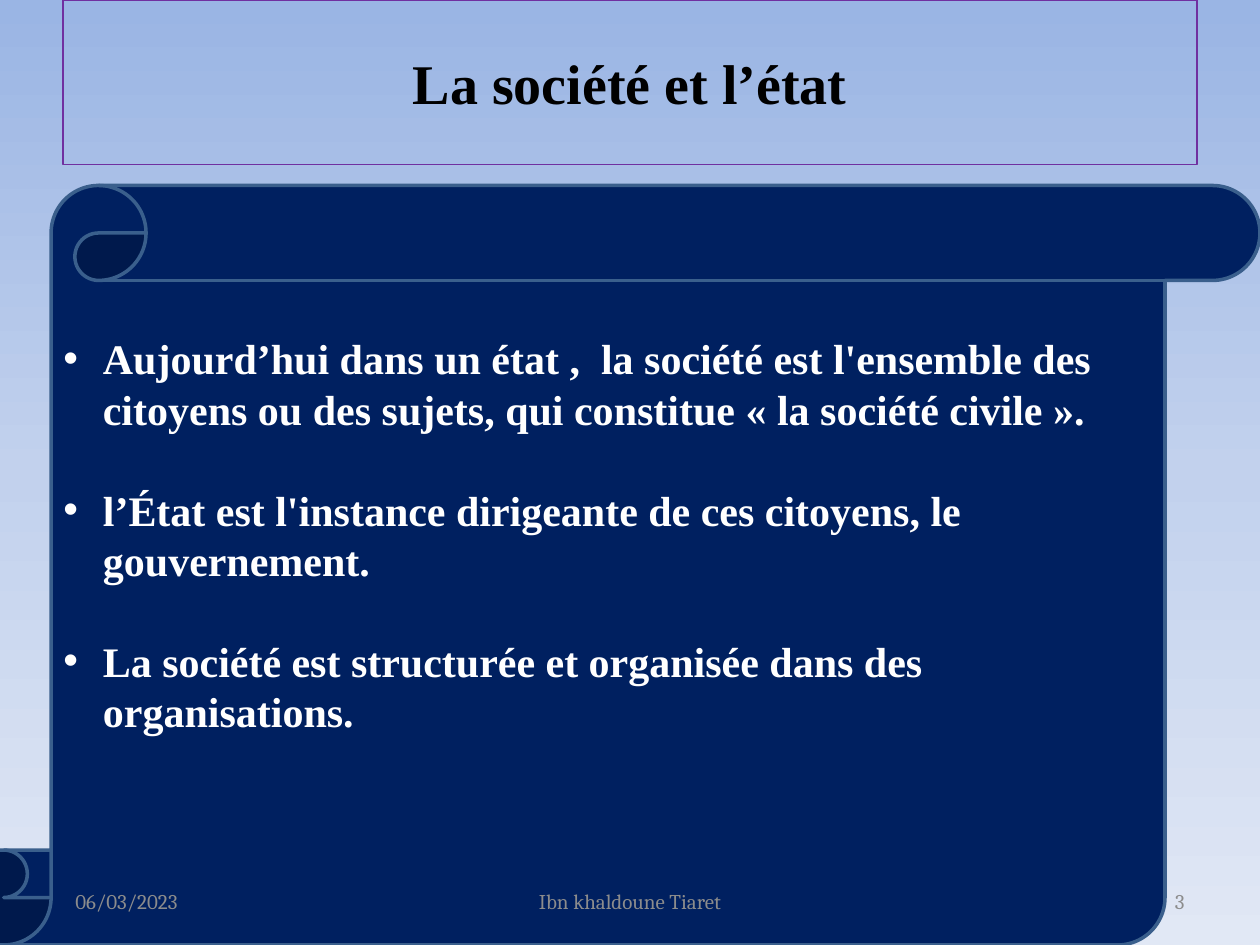
from copy import deepcopy

from pptx import Presentation
from pptx.dml.color import RGBColor
from pptx.enum.shapes import MSO_SHAPE as Shape
from pptx.enum.text import MSO_ANCHOR as Anchor, PP_ALIGN as Align
from pptx.oxml.ns import qn
from pptx.oxml.xmlchemy import OxmlElement
from pptx.util import Pt

NAVY = RGBColor(0x00, 0x20, 0x60)
STEEL = RGBColor(0x3A, 0x5F, 0x8C)
PURPLE = RGBColor(0x70, 0x30, 0xA0)
WHITE = RGBColor(0xFF, 0xFF, 0xFF)
BLACK = RGBColor(0x00, 0x00, 0x00)
GREY = RGBColor(0x8C, 0x8C, 0x8C)
SKY = [
    (0, RGBColor(0x9A, 0xB5, 0xE4)),
    (0.5, RGBColor(0xC2, 0xD1, 0xED)),
    (1, RGBColor(0xE1, 0xE8, 0xF5)),
]

TITLE_FONT = {"name": "Times New Roman", "size": Pt(32), "bold": True}
BODY_FONT = {"name": "Times New Roman", "size": Pt(24), "bold": True}
FOOTER_FONT = {"name": "Cambria", "size": Pt(12)}

POINTS = [
    "Aujourd’hui dans un état ,  la société est l'ensemble des citoyens "
    "ou des sujets, qui constitue « la société civile ».",
    "l’État est l'instance dirigeante de ces citoyens, le gouvernement.",
    "La société est structurée et organisée dans des organisations.",
]
FOOTERS = [
    (36, 168, "06/03/2023", Align.LEFT),
    (246, 228, "Ibn khaldoune Tiaret", Align.CENTER),
    (516, 168, "3", Align.RIGHT),
]


def apply(target, values):
    """Set each attribute of target from a dict of format values."""
    for key, value in values.items():
        setattr(target, key, value)


def write(paragraph, text, font, color, align):
    """Put one formatted run in a paragraph."""
    run = paragraph.add_run()
    run.text = text
    apply(run.font, font)
    run.font.color.rgb = color
    paragraph.alignment = align


def outline(shape, color, width):
    """Give a shape a solid outline."""
    shape.line.color.rgb = color
    shape.line.width = Pt(width)


def add_bullet(paragraph):
    """Give a paragraph a hanging round bullet."""
    properties = paragraph._p.get_or_add_pPr()
    properties.set("marL", str(Pt(22.5)))
    properties.set("indent", str(-Pt(22.5)))
    for tag, key, value in (("a:buFont", "typeface", "Arial"), ("a:buChar", "char", "•")):
        part = OxmlElement(tag)
        part.set(key, value)
        properties.append(part)


def paint_sky(slide):
    """Fill the background with a three-stop vertical gradient."""
    fill = slide.background.fill
    fill.gradient()
    fill.gradient_angle = 270
    stops = next(slide.element.iter(qn("a:gsLst")))
    stops.insert(1, deepcopy(stops[0]))
    for stop, (position, color) in zip(fill.gradient_stops, SKY):
        stop.position = position
        stop.color.rgb = color


def add_title(slide, text):
    """Place the framed title."""
    title = slide.shapes.title
    apply(title, {"left": Pt(36), "top": Pt(0), "width": Pt(648), "height": Pt(94)})
    outline(title, PURPLE, 0.75)
    title.text_frame.vertical_anchor = Anchor.MIDDLE
    write(title.text_frame.paragraphs[0], text, TITLE_FONT, BLACK, Align.CENTER)


def add_scroll(slide, points):
    """Draw the scroll that carries the bulleted points."""
    scroll = slide.shapes.add_shape(Shape.VERTICAL_SCROLL, Pt(-25), Pt(106), Pt(745), Pt(434))
    scroll.shadow.inherit = False
    scroll.fill.solid()
    scroll.fill.fore_color.rgb = NAVY
    outline(scroll, STEEL, 2)
    frame = scroll.text_frame
    apply(frame, {"word_wrap": True, "vertical_anchor": Anchor.TOP, "margin_top": Pt(30)})
    for index, point in enumerate(points):
        paragraph = frame.add_paragraph() if index else frame.paragraphs[0]
        paragraph.line_spacing = Pt(28.8)
        paragraph.space_before = Pt(28.8 if index else 0)
        write(paragraph, point, BODY_FONT, WHITE, Align.LEFT)
        add_bullet(paragraph)


def add_footer(slide, left, width, text, align):
    """Add one footer text at the bottom of the slide."""
    footer = slide.shapes.add_textbox(Pt(left), Pt(500.5), Pt(width), Pt(28.75))
    apply(footer.text_frame, {"word_wrap": True, "vertical_anchor": Anchor.MIDDLE})
    write(footer.text_frame.paragraphs[0], text, FOOTER_FONT, GREY, align)


def main():
    """Build and save the slide."""
    deck = Presentation()
    apply(deck, {"slide_width": Pt(720), "slide_height": Pt(540)})
    slide = deck.slides.add_slide(deck.slide_layouts[5])
    paint_sky(slide)
    add_scroll(slide, POINTS)
    add_title(slide, "La société et l’état")
    for footer in FOOTERS:
        add_footer(slide, *footer)
    deck.save("out.pptx")


if __name__ == "__main__":
    main()
